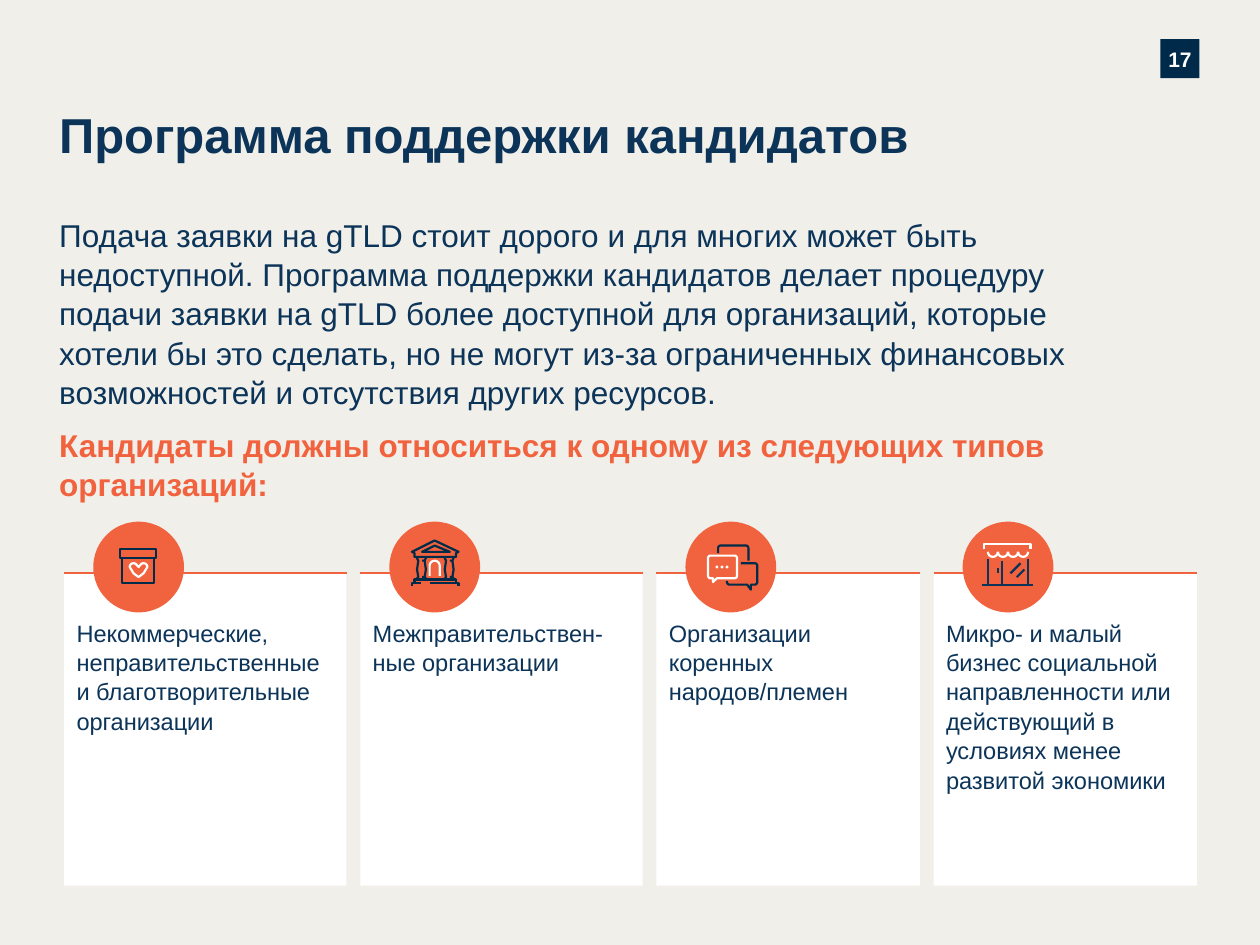
from math import cos, radians, sin

from lxml import etree
from pptx import Presentation
from pptx.dml.color import RGBColor
from pptx.enum.shapes import MSO_CONNECTOR, MSO_SHAPE
from pptx.enum.text import MSO_ANCHOR, PP_ALIGN
from pptx.oxml.ns import qn
from pptx.util import Inches, Pt

RECTANGLE, OVAL = MSO_SHAPE.RECTANGLE, MSO_SHAPE.OVAL
STRAIGHT = MSO_CONNECTOR.STRAIGHT
TOP, MIDDLE = MSO_ANCHOR.TOP, MSO_ANCHOR.MIDDLE
LEFT, CENTER = PP_ALIGN.LEFT, PP_ALIGN.CENTER
COLORS = {
    "paper": "F1EFEA",
    "white": "FFFFFF",
    "navy": "0B3458",
    "dark": "002B49",
    "badge": "002A49",
    "orange": "F1633E",
}
COLORS = {name: RGBColor.from_string(value) for name, value in COLORS.items()}

deck = Presentation()
deck.slide_width, deck.slide_height = Inches(10), Inches(7.5)
page = deck.slides.add_slide(deck.slide_layouts[6])
page.background.fill.solid()
page.background.fill.fore_color.rgb = COLORS["paper"]


def arc(x, y, radius, start, end):
    """Points along a circle, in degrees clockwise from the right."""
    angles = [start + (end - start) * step / 8 for step in range(9)]
    return [(x + radius * cos(radians(a)), y + radius * sin(radians(a))) for a in angles]


def draw_stroke(color, points, closed=False):
    """A straight connector for two points, an unfilled outline for more."""
    places = [(Inches(x), Inches(y)) for x, y in points]
    if len(places) == 2:
        stroke = page.shapes.add_connector(STRAIGHT, *places[0], *places[1])
        etree.SubElement(stroke._element.spPr, qn("a:effectLst"))
    else:
        builder = page.shapes.build_freeform(*places[0])
        builder.add_line_segments(places[1:], close=closed)
        stroke = builder.convert_to_shape()
        stroke.fill.background()
        stroke.shadow.inherit = False
    stroke.line.color.rgb = COLORS[color]
    stroke.line.width = Pt(1.25)


# Text blocks: place, fill, margins, anchor, alignment, size, colour, bold, text
NO_MARGINS = (0, 0, 0, 0)
CARD_MARGINS = (0.1, 0.35, 0.16, 0.2)
CARD_TOP, CARD_HEIGHT, CARD_GAP = 4.55, 2.48, 0.11
blocks = [
    ((9.21, 0.31, 0.31, 0.31), "badge", NO_MARGINS, MIDDLE, CENTER, 12, "white", True, "17"),
    ((0.47, 0.78, 6.83, 0.55), None, NO_MARGINS, MIDDLE, LEFT, 28, "navy", True,
     "Программа поддержки кандидатов"),
    ((0.47, 1.7, 8.15, 1.49), None, NO_MARGINS, TOP, LEFT, 18, "navy", False,
     "Подача заявки на gTLD стоит дорого и для многих может быть недоступной. "
     "Программа поддержки кандидатов делает процедуру подачи заявки на gTLD более "
     "доступной для организаций, которые хотели бы это сделать, но не могут из-за "
     "ограниченных финансовых возможностей и отсутствия других ресурсов."),
    ((0.47, 3.37, 9.02, 0.43), None, NO_MARGINS, TOP, LEFT, 18, "orange", True,
     "Кандидаты должны относиться к одному из следующих типов организаций:"),
]
cards = [
    (2.24, "Некоммерческие,\nнеправительственные и благотворительные организации"),
    (2.24, "Межправительствен-ные организации"),
    (2.09, "Организации коренных народов/племен"),
    (2.09, "Микро- и малый бизнес социальной направленности или действующий "
           "в условиях менее развитой экономики"),
]
card_edges = []
left = 0.51
for width, text in cards:
    blocks.append(((left, CARD_TOP, width, CARD_HEIGHT), "white", CARD_MARGINS,
                   TOP, LEFT, 13.5, "navy", False, text))
    card_edges.append((left, left + width))
    left += width + CARD_GAP

for place, fill, margins, anchor, align, size, color, bold, text in blocks:
    place = [Inches(value) for value in place]
    if fill:
        box = page.shapes.add_shape(RECTANGLE, *place)
        box.fill.solid()
        box.fill.fore_color.rgb = COLORS[fill]
        box.line.fill.background()
        box.shadow.inherit = False
    else:
        box = page.shapes.add_textbox(*place)
    frame = box.text_frame
    frame.word_wrap = True
    frame.vertical_anchor = anchor
    frame.margin_left, frame.margin_top, frame.margin_right, frame.margin_bottom = [
        Inches(value) for value in margins]
    frame.text = text
    for para in frame.paragraphs:
        para.alignment = align
        para.line_spacing = 1.04
        for span in para.runs:
            span.font.name = "Arial"
            span.font.size = Pt(size)
            span.font.bold = bold
            span.font.color.rgb = COLORS[color]

# Card rules and icon discs
for left, right in card_edges:
    draw_stroke("orange", [(left, CARD_TOP), (right, CARD_TOP)])
    disc = page.shapes.add_shape(OVAL, Inches(left + 0.23), Inches(4.14), Inches(0.72), Inches(0.72))
    disc.fill.solid()
    disc.fill.fore_color.rgb = COLORS["orange"]
    disc.line.fill.background()
    disc.shadow.inherit = False

# Donation box with a heart
draw_stroke("dark", [(0.95, 4.36), (1.24, 4.36), (1.24, 4.43), (0.95, 4.43)], True)
draw_stroke("dark", [(0.97, 4.43), (1.22, 4.43), (1.22, 4.63), (0.97, 4.63)], True)
draw_stroke("white", [(1.1, 4.58), (1.06, 4.55), *arc(1.06, 4.5, 0.03, 180, 320),
                      (1.1, 4.5), *arc(1.14, 4.5, 0.03, 220, 360), (1.14, 4.55)], True)

# Public building: steps, doorway, columns, roof
draw_stroke("dark", [(3.41, 4.63), (3.64, 4.63), (3.64, 4.65)])
draw_stroke("dark", [(3.27, 4.65), (3.27, 4.63), (3.34, 4.63)])
draw_stroke("dark", [(3.29, 4.63), (3.29, 4.6), (3.62, 4.6), (3.62, 4.63)])
draw_stroke("white", [(3.41, 4.57), *arc(3.45, 4.49, 0.04, 180, 360), (3.49, 4.57)])
for left in (3.31, 3.53):
    draw_stroke("dark", [(left, 4.42), (left, 4.43), (left + 0.01, 4.45), (left, 4.52),
                         (left + 0.01, 4.58), (left, 4.59), (left, 4.6)])
    draw_stroke("dark", [(left + 0.06, 4.45), (left + 0.07, 4.52), (left + 0.06, 4.58)])
    for outer, inner, curve in ((4.42, 4.45, 4.43), (4.6, 4.58, 4.59)):
        draw_stroke("dark", [(left + 0.04, inner), (left + 0.06, inner),
                             (left + 0.07, curve), (left + 0.07, outer)])
draw_stroke("dark", [(3.45, 4.33), (3.35, 4.38), (3.57, 4.38)], True)
draw_stroke("dark", [(3.62, 4.42), (3.29, 4.42), (3.29, 4.39), (3.27, 4.38),
                     (3.45, 4.29), (3.64, 4.38), (3.62, 4.39)], True)

# Speech bubbles
draw_stroke("white", [*arc(5.64, 4.43, 0.02, 270, 180), *arc(5.64, 4.57, 0.02, 180, 90),
                      (5.66, 4.59), (5.66, 4.62), (5.69, 4.59),
                      *arc(5.83, 4.57, 0.02, 90, 0), *arc(5.83, 4.43, 0.02, 0, -90)], True)
draw_stroke("dark", [(5.77, 4.61), *arc(5.79, 4.62, 0.02, 180, 90), (5.93, 4.64),
                     (5.96, 4.68), (5.96, 4.64), *arc(5.99, 4.62, 0.02, 90, 0),
                     *arc(5.99, 4.49, 0.02, 0, -90), (5.88, 4.47)])
draw_stroke("dark", [(5.7, 4.39), *arc(5.72, 4.35, 0.02, 180, 270),
                     *arc(5.92, 4.35, 0.02, 270, 360), (5.94, 4.45)])
for dot in range(3):
    draw_stroke("white", arc(5.69 + 0.04 * dot, 4.5, 0.003, 0, 360), True)

# Shop with an awning
for scallop in range(4):
    draw_stroke("white", arc(7.88 + 0.08 * scallop, 4.38, 0.04, 0, 180))
draw_stroke("white", [(7.81, 4.36), (7.81, 4.32), (8.18, 4.32), (8.18, 4.36)])
shop_lines = [
    ((7.84, 4.44), (7.84, 4.64)),
    ((7.95, 4.45), (7.95, 4.64)),
    ((8.16, 4.44), (8.16, 4.64)),
    ((7.92, 4.51), (7.92, 4.55)),
    ((7.79, 4.64), (8.2, 4.64)),
    ((8.1, 4.47), (8.02, 4.55)),
    ((8.13, 4.52), (8.07, 4.58)),
]
for ends in shop_lines:
    draw_stroke("navy", ends)

deck.save("out.pptx")
